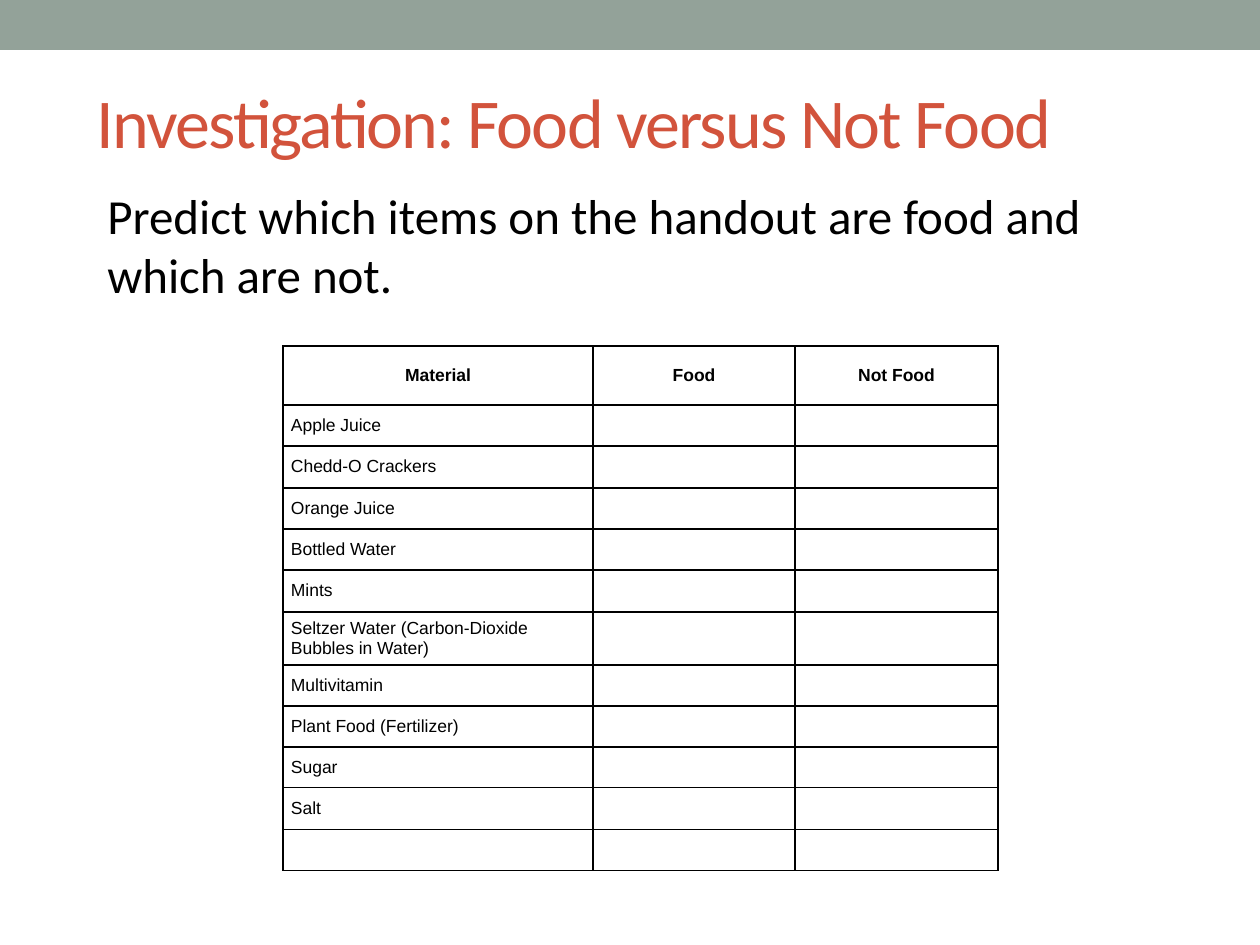
"""Build the food versus not food investigation slide."""
from lxml.etree import SubElement
from pptx import Presentation
from pptx.dml.color import RGBColor
from pptx.enum.shapes import MSO_SHAPE
from pptx.enum.text import MSO_ANCHOR, MSO_AUTO_SIZE, PP_ALIGN
from pptx.oxml import parse_xml
from pptx.oxml.ns import nsdecls
from pptx.util import Emu, Pt

THEME = {
    "bar": RGBColor.from_string("93A299"),
    "title": {"name": "Calibri", "size": Pt(40), "color": RGBColor.from_string("D2533C")},
    "body": {"name": "Calibri", "size": Pt(28), "color": RGBColor.from_string("000000")},
    "head": {"name": "Arial", "size": Pt(10), "bold": True, "color": RGBColor.from_string("000000")},
    "cell": {"name": "Arial", "size": Pt(10), "bold": False, "color": RGBColor.from_string("000000")},
    "border": "000000",
}
HEADERS = ["Material", "Food", "Not Food"]
MATERIALS = [
    "Apple Juice", "Chedd-O Crackers", "Orange Juice", "Bottled Water", "Mints",
    "Seltzer Water (Carbon-Dioxide Bubbles in Water)", "Multivitamin",
    "Plant Food (Fertilizer)", "Sugar", "Salt", "",
]
COL_WIDTHS = [310, 202, 203]
ROW_HEIGHTS = [59, 41, 42, 41, 41, 42, 53, 41, 41, 41, 42, 41]


def px(*lengths):
    return [Emu(round(n * 914400 / 126)) for n in lengths]


def write(p, text, style):
    r = p.add_run()
    r.text = text
    for key, value in style.items():
        if key == "color":
            r.font.color.rgb = value
        else:
            setattr(r.font, key, value)
    return r


prs = Presentation()
prs.slide_width, prs.slide_height = px(1260, 945)
s = prs.slides.add_slide(prs.slide_layouts[5])

bar = s.shapes.add_shape(MSO_SHAPE.RECTANGLE, *px(0, 0, 1260, 50))
bar.shadow.inherit = False
bar.fill.solid()
bar.fill.fore_color.rgb = THEME["bar"]
bar.line.fill.background()

title = s.shapes.title
title.left, title.top, title.width, title.height = px(84, 53, 1176, 136)
tf = title.text_frame
for key, value in {"vertical_anchor": MSO_ANCHOR.MIDDLE, "auto_size": MSO_AUTO_SIZE.NONE}.items():
    setattr(tf, key, value)
p = tf.paragraphs[0]
p.alignment = PP_ALIGN.LEFT
r = write(p, "Investigation: Food versus Not Food", THEME["title"])
r.font._element.set("spc", "-100")

table = s.shapes.add_table(len(ROW_HEIGHTS), len(COL_WIDTHS),
                           *px(283, 346, sum(COL_WIDTHS), sum(ROW_HEIGHTS))).table
table.first_row = table.horz_banding = False
for col, width in zip(table.columns, px(*COL_WIDTHS)):
    col.width = width
for row, height in zip(table.rows, px(*ROW_HEIGHTS)):
    row.height = height

side, flat = px(8, 0)
cell_format = {
    "margin_left": side, "margin_right": side, "margin_top": flat, "margin_bottom": flat,
    "vertical_anchor": MSO_ANCHOR.MIDDLE,
}
rows = [HEADERS] + [[name, "", ""] for name in MATERIALS]
for i, texts in enumerate(rows):
    for j, text in enumerate(texts):
        cell = table.cell(i, j)
        for key, value in cell_format.items():
            setattr(cell, key, value)
        cell.fill.background()
        p = cell.text_frame.paragraphs[0]
        p.alignment = PP_ALIGN.LEFT if i else PP_ALIGN.CENTER
        if text:
            write(p, text, THEME["cell" if i else "head"])
        tcPr = cell._tc.get_or_add_tcPr()
        for k, edge in enumerate(("lnL", "lnR", "lnT", "lnB")):
            ln = parse_xml(f'<a:{edge} {nsdecls("a")} w="{Pt(1)}"><a:solidFill/></a:{edge}>')
            SubElement(ln[0], ln[0].tag.replace("solidFill", "srgbClr"), val=THEME["border"])
            tcPr.insert(k, ln)

prompt = s.shapes.add_textbox(*px(95, 179, 1081, 131))
tf = prompt.text_frame
tf.word_wrap = True
tf.auto_size = MSO_AUTO_SIZE.SHAPE_TO_FIT_TEXT
write(tf.paragraphs[0], "Predict which items on the handout are food and which are not.", THEME["body"])

prs.save("out.pptx")
